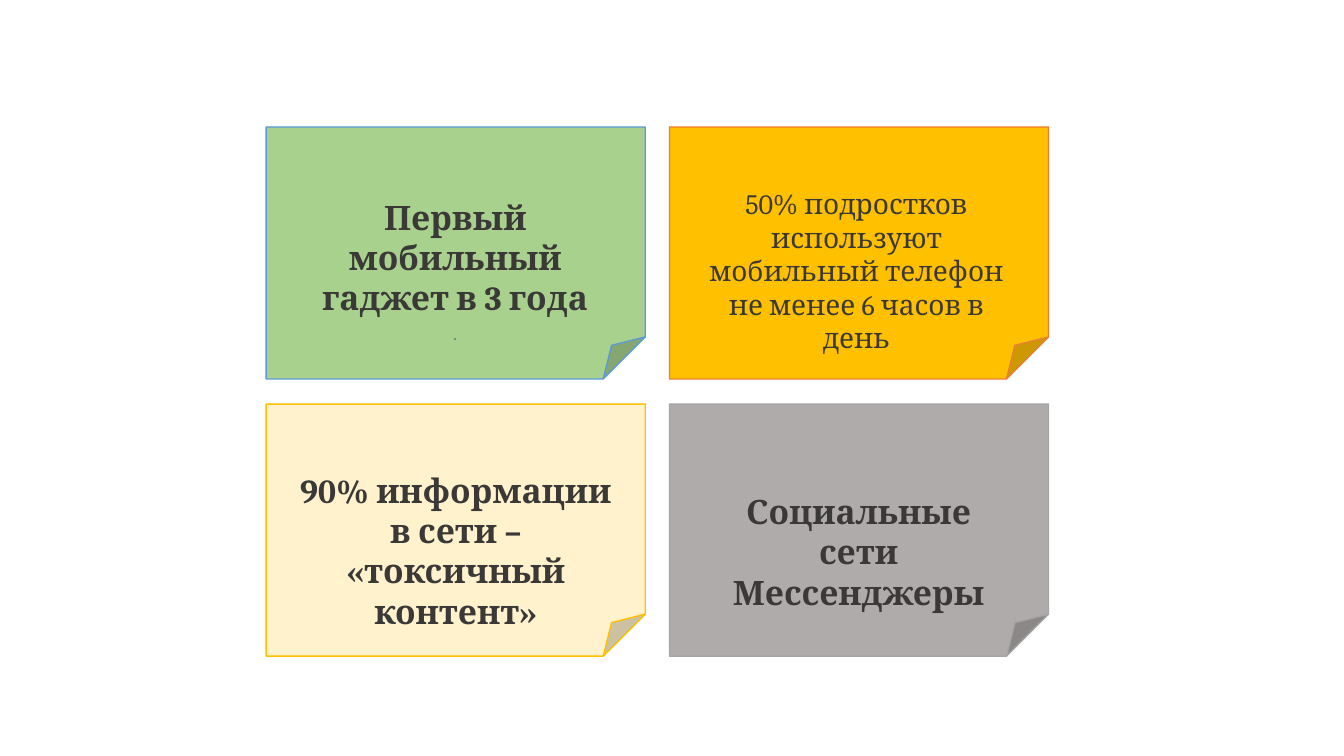
from pptx import Presentation
from pptx.dml.color import RGBColor as RGB
from pptx.enum.shapes import MSO_SHAPE as Shape
from pptx.enum.text import MSO_AUTO_SIZE as Fit, PP_ALIGN as Align
from pptx.util import Inches as In, Pt

THEME = {
    "font": "Cambria", "ink": "3B3838", "dim": "808080",
    "big": 24, "mid": 20, "small": 14,
    "green": ("A9D18E", "5B9BD5"), "gold": ("FFC000", "ED7D31"),
    "cream": ("FFF2CC", "FFC000"), "gray": ("AFABAB", "A5A5A5"),
}

# Grid of two columns and two rows
LEFT, TOP = 2.64, 1.26
WIDE, HIGH = 3.76, 2.5
STEP_X, STEP_Y = 4, 2.75

deck = Presentation()
deck.slide_width, deck.slide_height = In(13.33), In(7.5)
slide = deck.slides.add_slide(deck.slide_layouts[6])


def write(para, text, size=THEME["big"], bold=True, ink=THEME["ink"], gap=0):
    para.alignment = Align.CENTER
    para.space_before = Pt(gap)
    run = para.add_run()
    run.text = text
    font = run.font
    font.name, font.size, font.bold = THEME["font"], Pt(size), bold
    font.color.rgb = RGB.from_string(ink)


# Each note: column, row, colours, text box (inset x, inset y, width, height), lines
notes = [
    (0, 0, "green", (0.38, 0.64, 2.99, 1.6), [
        ("Первый мобильный гаджет в 3 года", {}),
        (".", {"size": THEME["small"], "bold": False,
               "ink": THEME["dim"], "gap": 2.8})]),
    (1, 0, "gold", (0.14, 0.54, 3.43, 1.45), [
        ("50% подростков используют мобильный телефон не менее 6 часов в день",
         {"size": THEME["mid"], "bold": False})]),
    (1, 1, "gray", (0.38, 0.81, 2.99, 0.91), [
        ("Социальные сети", {}), ("Мессенджеры", {})]),
    (0, 1, "cream", (0.2, 0.6, 3.36, 1.31), [
        ("90% информации в сети – «токсичный контент»", {})]),
]

for col, row, tone, (dx, dy, wide, high), lines in notes:
    x, y = LEFT + col * STEP_X, TOP + row * STEP_Y

    # Folded paper
    fill, edge = THEME[tone]
    note = slide.shapes.add_shape(Shape.FOLDED_CORNER, In(x), In(y), In(WIDE), In(HIGH))
    note.shadow.inherit = False
    note.fill.solid()
    note.fill.fore_color.rgb = RGB.from_string(fill)
    note.line.color.rgb = RGB.from_string(edge)
    note.line.width = Pt(1)

    # Words on the paper
    box = slide.shapes.add_textbox(In(x + dx), In(y + dy), In(wide), In(high))
    frame = box.text_frame
    frame.word_wrap = True
    frame.auto_size = Fit.SHAPE_TO_FIT_TEXT
    for i, (text, style) in enumerate(lines):
        para = frame.add_paragraph() if i else frame.paragraphs[0]
        write(para, text, **style)

deck.save("out.pptx")
